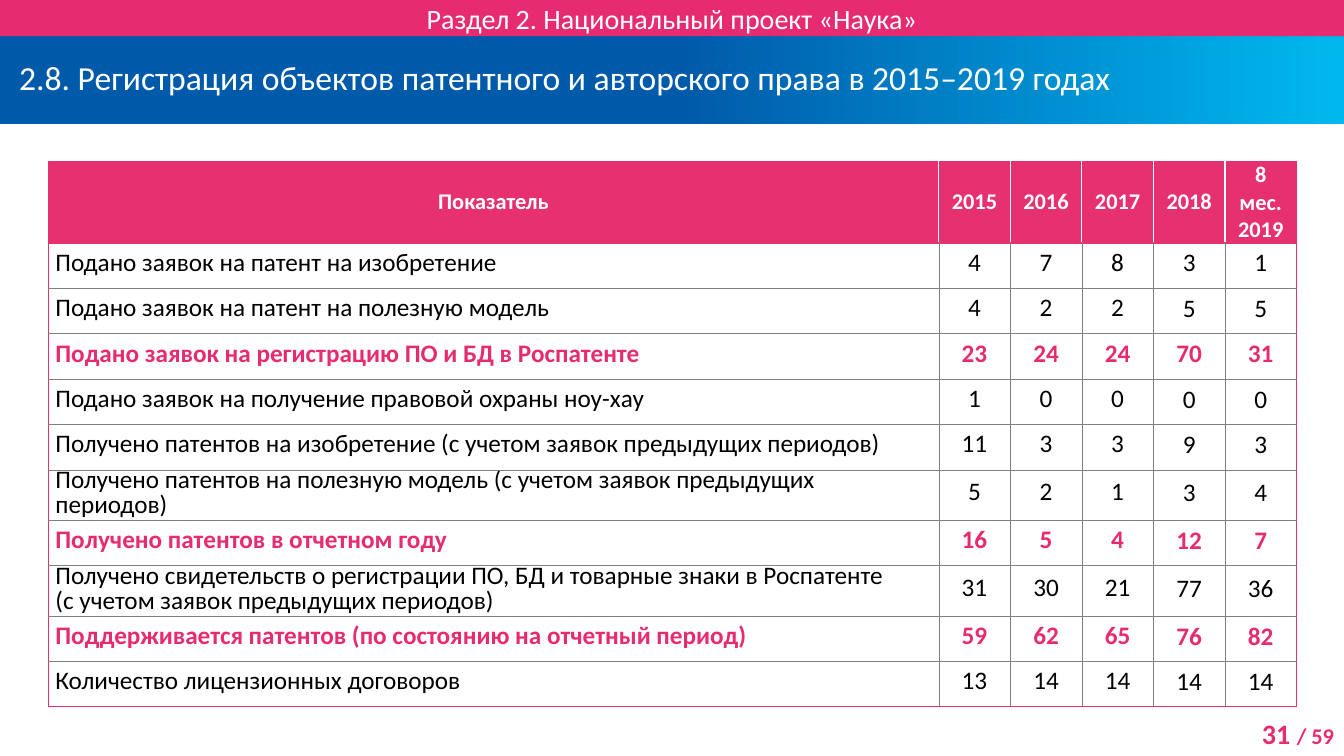
import lxml.etree
import pptx
import pptx.dml.color
import pptx.enum.shapes
import pptx.enum.text
import pptx.oxml.ns
import pptx.util

Inches = pptx.util.Inches
Pt = pptx.util.Pt
Align = pptx.enum.text.PP_ALIGN
Anchor = pptx.enum.text.MSO_ANCHOR

FONT = "Calibri"
COLORS = {
    "pink": "E72B70",
    "table_pink": "E73070",
    "blue": "005AAA",
    "cyan": "00B8EE",
    "white": "FFFFFF",
    "black": "000000",
    "grey": "808080",
}
HEADERS = ["Показатель", "2015", "2016", "2017", "2018", "8 мес.\n2019"]
INDICATORS = [
    ("Подано заявок на патент на изобретение", 4, 7, 8, 3, 1),
    ("Подано заявок на патент на полезную модель", 4, 2, 2, 5, 5),
    ("Подано заявок на регистрацию ПО и БД в Роспатенте", 23, 24, 24, 70, 31),
    ("Подано заявок на получение правовой охраны ноу-хау", 1, 0, 0, 0, 0),
    ("Получено патентов на изобретение (с учетом заявок предыдущих периодов)", 11, 3, 3, 9, 3),
    ("Получено патентов на полезную модель (с учетом заявок предыдущих периодов)", 5, 2, 1, 3, 4),
    ("Получено патентов в отчетном году", 16, 5, 4, 12, 7),
    ("Получено свидетельств о регистрации ПО, БД и товарные знаки в Роспатенте\v"
     "(с учетом заявок предыдущих периодов)", 31, 30, 21, 77, 36),
    ("Поддерживается патентов (по состоянию на отчетный период)", 59, 62, 65, 76, 82),
    ("Количество лицензионных договоров", 13, 14, 14, 14, 14),
]
HIGHLIGHTED_ROWS = {3, 7, 9}
TWO_LINE_ROWS = {6, 8}


def color(name):
    return pptx.dml.color.RGBColor.from_string(COLORS[name])


def style_font(font, size, name, bold=False):
    font.name = FONT
    font.size = Pt(size)
    font.bold = bold
    font.color.rgb = color(name)


def style_text(frame, size, name, bold=False, align=Align.LEFT, spacing=None):
    for para in frame.paragraphs:
        para.alignment = align
        if spacing:
            para.line_spacing = Pt(spacing)
        for span in para.runs:
            style_font(span.font, size, name, bold)


def set_margins(target, left, top, right, bottom):
    target.margin_left = Inches(left)
    target.margin_top = Inches(top)
    target.margin_right = Inches(right)
    target.margin_bottom = Inches(bottom)


def add_band(page, left, top, width, height, text):
    band = page.shapes.add_shape(
        pptx.enum.shapes.MSO_SHAPE.RECTANGLE,
        Inches(left), Inches(top), Inches(width), Inches(height))
    band.shadow.inherit = False
    band.line.fill.background()
    band.text_frame.text = text
    band.text_frame.word_wrap = True
    band.text_frame.vertical_anchor = Anchor.MIDDLE
    return band


def add_section_band(page, left, top, width, height):
    band = add_band(page, left, top, width, height, "Раздел 2. Национальный проект «Наука»")
    band.fill.solid()
    band.fill.fore_color.rgb = color("pink")
    set_margins(band.text_frame, 0, 0, 0, 0)
    style_text(band.text_frame, 20, "white", align=Align.CENTER)


def add_title_band(page, left, top, width, height):
    band = add_band(page, left, top, width, height,
                    "2.8. Регистрация объектов патентного и авторского права в 2015–2019 годах")
    band.fill.gradient()
    band.fill.gradient_angle = 0
    stops = band.fill.gradient_stops
    for stop, position, name in zip(stops, (0.5, 1), ("blue", "cyan")):
        stop.position = position
        stop.color.rgb = color(name)
    set_margins(band.text_frame, 0.19, 0, 0.1, 0)
    style_text(band.text_frame, 24, "white", spacing=24)


def set_borders(cell, borders):
    properties = cell._tc.get_or_add_tcPr()
    for index, side in enumerate(("L", "R", "T", "B")):
        name, width = borders[side]
        line = lxml.etree.Element(pptx.oxml.ns.qn("a:ln" + side), w=str(Pt(width)))
        fill = lxml.etree.SubElement(line, pptx.oxml.ns.qn("a:solidFill"))
        lxml.etree.SubElement(fill, pptx.oxml.ns.qn("a:srgbClr"), val=COLORS[name])
        properties.insert(index, line)


def cell_borders(row, column, last_row, last_column):
    pink = ("table_pink", 1)
    inner = ("white", 1) if row == 0 else ("grey", 0.25)
    return {
        "L": pink if column == 0 else inner,
        "R": pink if column == last_column else inner,
        "T": pink if row <= 1 else inner,
        "B": pink if row in (0, last_row) else inner,
    }


def fill_cell(cell, row, column, value):
    cell.text_frame.text = str(value)
    cell.vertical_anchor = Anchor.MIDDLE
    if row == 0:
        cell.fill.solid()
        cell.fill.fore_color.rgb = color("table_pink")
        style_text(cell.text_frame, 16, "white", True, Align.CENTER)
    else:
        cell.fill.background()
        highlighted = row in HIGHLIGHTED_ROWS
        style_text(cell.text_frame, 18, "pink" if highlighted else "black", highlighted,
                   Align.CENTER if column else Align.LEFT, 18)
    if row and column >= 4:
        set_margins(cell, 0.01, 0.01, 0.01, 0)
    else:
        set_margins(cell, 0.07, 0, 0.07, 0)


def add_indicator_table(page, left, top, width, height):
    rows = [HEADERS] + INDICATORS
    last_row, last_column = len(rows) - 1, len(HEADERS) - 1
    table = page.shapes.add_table(
        len(rows), len(HEADERS),
        Inches(left), Inches(top), Inches(width), Inches(height)).table
    table.horz_banding = False
    year_width = 0.71
    for index, column in enumerate(table.columns):
        column.width = Inches(year_width if index else width - last_column * year_width)
    for row, values in enumerate(rows):
        row_height = 0.81 if row == 0 else 0.5 if row in TWO_LINE_ROWS else 0.45
        table.rows[row].height = Inches(row_height)
        for column, value in enumerate(values):
            cell = table.cell(row, column)
            fill_cell(cell, row, column, value)
            set_borders(cell, cell_borders(row, column, last_row, last_column))


def add_page_number(page, left, top, width, height):
    box = page.shapes.add_textbox(Inches(left), Inches(top), Inches(width), Inches(height))
    box.text_frame.word_wrap = True
    para = box.text_frame.paragraphs[0]
    para.alignment = Align.RIGHT
    for text, size in (("31 ", 20), ("/ 59", 16)):
        span = para.add_run()
        span.text = text
        style_font(span.font, size, "pink", True)


def main():
    deck = pptx.Presentation()
    deck.slide_width = Inches(13.33)
    deck.slide_height = Inches(7.5)
    page = deck.slides.add_slide(deck.slide_layouts[6])
    add_page_number(page, 12.13, 7.06, 1.2, 0.44)
    add_title_band(page, 0, 0.36, 13.33, 0.87)
    add_section_band(page, 0, 0, 13.33, 0.36)
    add_indicator_table(page, 0.48, 1.6, 12.38, 5.41)
    deck.save("out.pptx")


if __name__ == "__main__":
    main()
